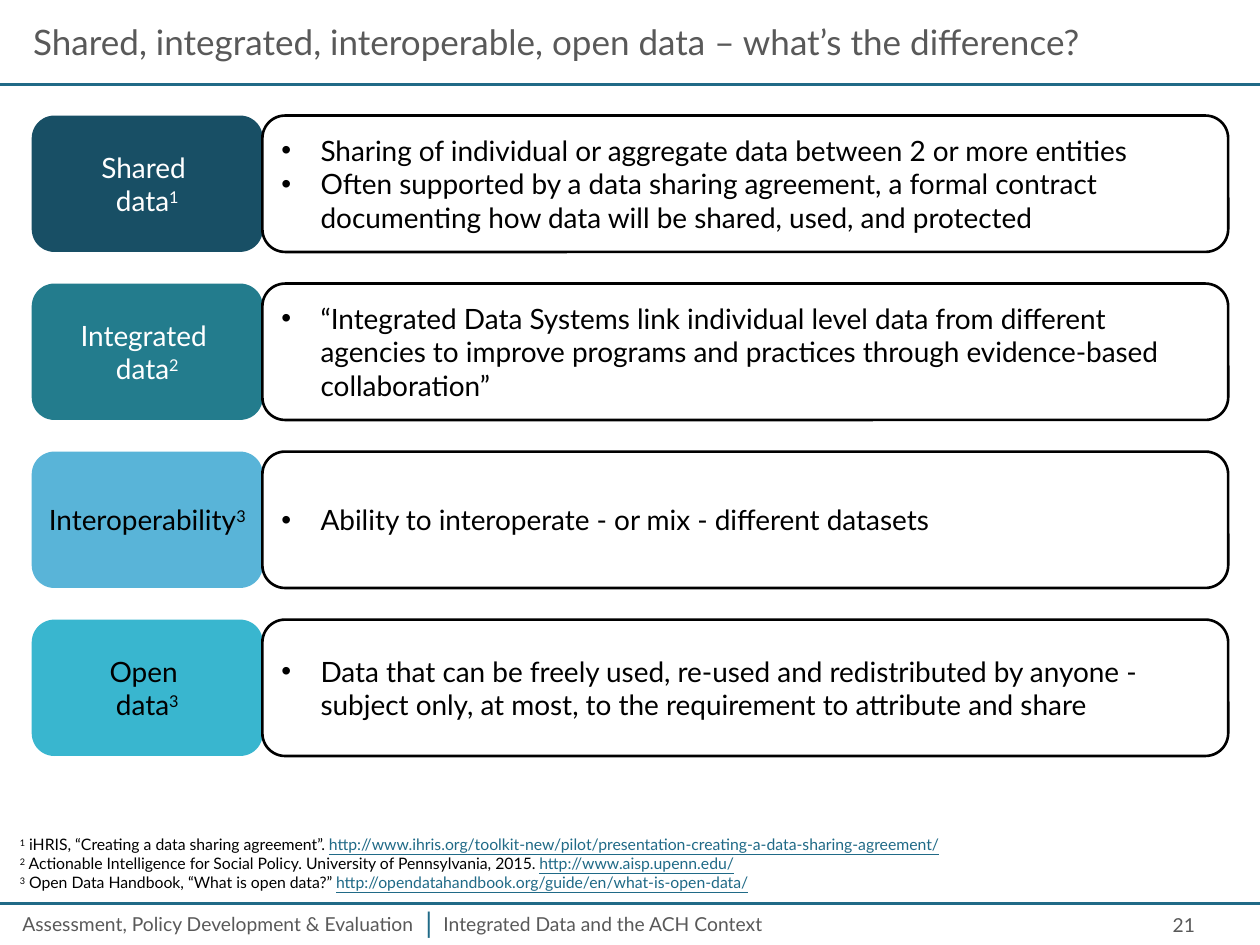
from lxml import etree
from pptx import Presentation
from pptx.dml.color import RGBColor
from pptx.enum.shapes import MSO_CONNECTOR, MSO_SHAPE
from pptx.enum.text import MSO_ANCHOR, PP_ALIGN
from pptx.oxml.ns import qn
from pptx.util import Cm, Pt

ROUND = MSO_SHAPE.ROUNDED_RECTANGLE
LINE = MSO_CONNECTOR.STRAIGHT
LEFT, MID, RIGHT = PP_ALIGN.LEFT, PP_ALIGN.CENTER, PP_ALIGN.RIGHT
TOP, CENTER = MSO_ANCHOR.TOP, MSO_ANCHOR.MIDDLE

HUES = {
    "black": "000000", "white": "FFFFFF", "gray": "595959", "link": "206A87",
    "navy": "184F65", "teal": "237C8D", "sky": "59B4D8", "aqua": "39B6CF",
}


def hue(name):
    return RGBColor.from_string(HUES[name])


def write(shape, paras, size=16, color="black", align=LEFT, anchor=TOP,
          bullet=False, inset=None):
    """Fill a shape with paragraphs, each a list of (text, kind) runs;
    kind is "" for plain, "sup" for superscript or "link" for underlined."""
    frame = shape.text_frame
    frame.word_wrap = True
    frame.vertical_anchor = anchor
    if inset is not None:
        frame.margin_left = frame.margin_right = Cm(inset)
        frame.margin_top = frame.margin_bottom = Cm(inset)
    for i, runs in enumerate(paras):
        para = frame.add_paragraph() if i else frame.paragraphs[0]
        para.alignment = align
        if bullet:
            props = para._p.get_or_add_pPr()
            props.set("marL", str(Cm(0.79)))
            props.set("indent", str(Cm(-0.79)))
            etree.SubElement(props, qn("a:buFont")).set("typeface", "Arial")
            etree.SubElement(props, qn("a:buChar")).set("char", "•")
        for text, kind in runs:
            run = para.add_run()
            run.text = text
            run.font.name = "Lato"
            run.font.size = Pt(size)
            run.font.color.rgb = hue("link" if kind == "link" else color)
            if kind == "link":
                run.font.underline = True
            elif kind == "sup":
                run._r.get_or_add_rPr().set("baseline", "30000")


deck = Presentation()
deck.slide_width, deck.slide_height = Cm(25.4), Cm(19.05)
slide = deck.slides.add_slide(deck.slide_layouts[6])
shapes = slide.shapes

# Rules under the title and above the footer
for y in (1.7, 18.21):
    rule = shapes.add_connector(LINE, Cm(0), Cm(y), Cm(25.4), Cm(y))
    rule.line.color.rgb = hue("link")
    rule.line.width = Pt(1.5)
    etree.SubElement(rule._element.spPr, qn("a:effectLst"))

# Title, footer and page number
for text, x, y, w, h, size, color, align, anchor in (
    ("Shared, integrated, interoperable, open data – what’s the difference?",
     0.42, 0.42, 24.56, 0.85, 20, "gray", LEFT, CENTER),
    ("Assessment, Policy Development & Evaluation",
     0.2, 18.26, 9.1, 0.73, 11, "gray", LEFT, TOP),
    ("Integrated Data and the ACH Context",
     8.69, 18.26, 12.9, 0.73, 11, "gray", LEFT, TOP),
    ("|", 8.22, 18.14, 0.85, 0.94, 16, "link", MID, TOP),
    ("21", 18.42, 18.26, 5.92, 0.76, 11, "gray", RIGHT, CENTER),
):
    box = shapes.add_textbox(Cm(x), Cm(y), Cm(w), Cm(h))
    write(box, [[(text, "")]], size=size, color=color, align=align,
          anchor=anchor)

# One row per term: coloured label and outlined definition
rows = (
    (["Shared ", "data"], "1", "navy", "white", [
        "Sharing of individual or aggregate data between 2 or more entities",
        "Often supported by a data sharing agreement, a formal contract "
        "documenting how data will be shared, used, and protected"]),
    (["Integrated ", "data"], "2", "teal", "white", [
        "“Integrated Data Systems link individual level data from different "
        "agencies to improve programs and practices through evidence-based "
        "collaboration”"]),
    (["Interoperability"], "3", "sky", "black", [
        "Ability to interoperate - or mix - different datasets"]),
    (["Open ", "data"], "3", "aqua", "black", [
        "Data that can be freely used, re-used and redistributed by anyone - "
        "subject only, at most, to the requirement to attribute and share"]),
)
for i, (term, note, fill, color, points) in enumerate(rows):
    y = Cm(2.33 + 3.387 * i)
    label = shapes.add_shape(ROUND, Cm(0.64), y, Cm(4.66), Cm(2.75))
    body = shapes.add_shape(ROUND, Cm(5.29), y, Cm(19.47), Cm(2.75))
    for shape, shade in ((label, fill), (body, "white")):
        shape.shadow.inherit = False
        shape.fill.solid()
        shape.fill.fore_color.rgb = hue(shade)
    label.line.fill.background()
    body.line.color.rgb = hue("black")
    body.line.width = Pt(1.5)
    lines = [[(text, "")] for text in term]
    lines[-1].append((note, "sup"))
    write(label, lines, color=color, align=MID, anchor=CENTER,
          inset=0.13 if len(term) == 1 else None)
    write(body, [[(text, "")] for text in points], anchor=CENTER, bullet=True)

# Sources
cites = (
    ("iHRIS, “Creating a data sharing agreement”. ",
     "http://www.ihris.org/toolkit-new/pilot/"
     "presentation-creating-a-data-sharing-agreement/"),
    ("Actionable Intelligence for Social Policy. "
     "University of Pennsylvania, 2015. ", "http://www.aisp.upenn.edu/"),
    ("Open Data Handbook, “What is open data?” ",
     "http://opendatahandbook.org/guide/en/what-is-open-data/"),
)
notes = shapes.add_textbox(Cm(0.15), Cm(16.71), Cm(25.04), Cm(1.42))
write(notes, [[(str(n), "sup"), (" " + text, ""), (link, "link")]
              for n, (text, link) in enumerate(cites, 1)], size=9)

deck.save("out.pptx")
